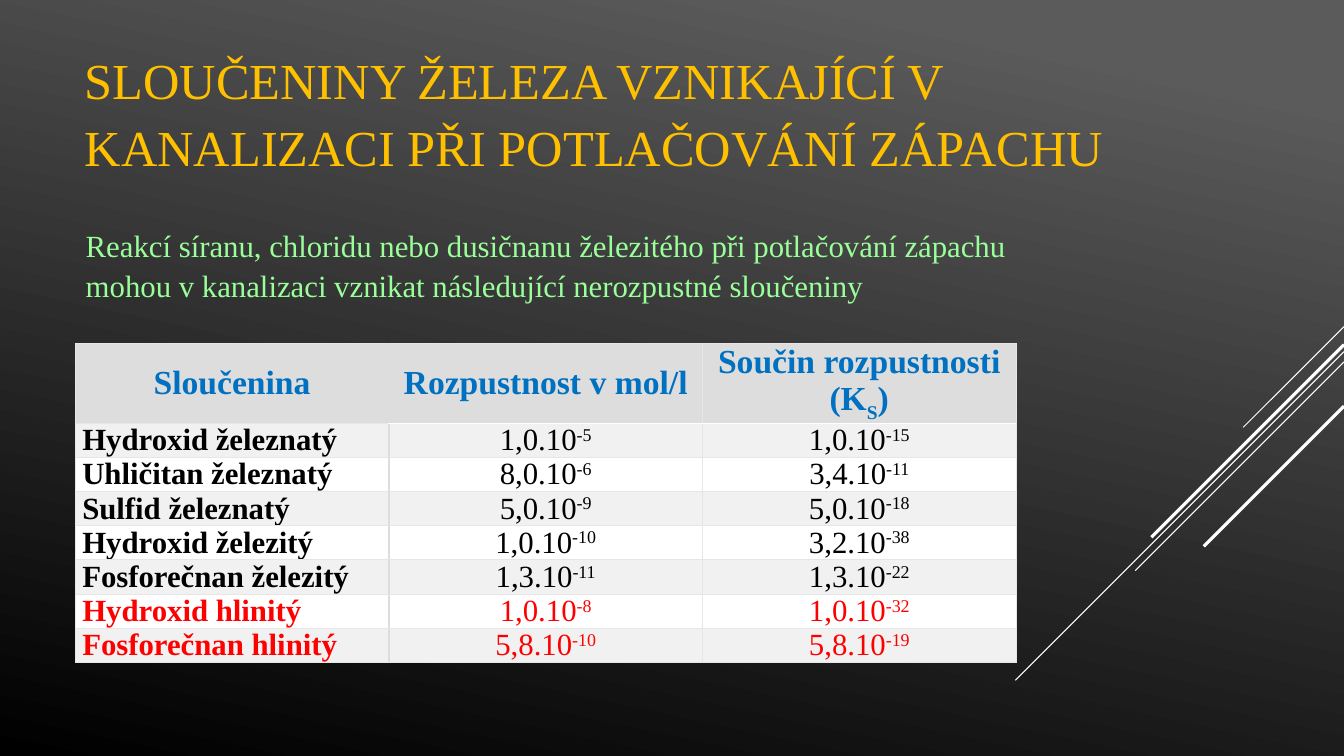
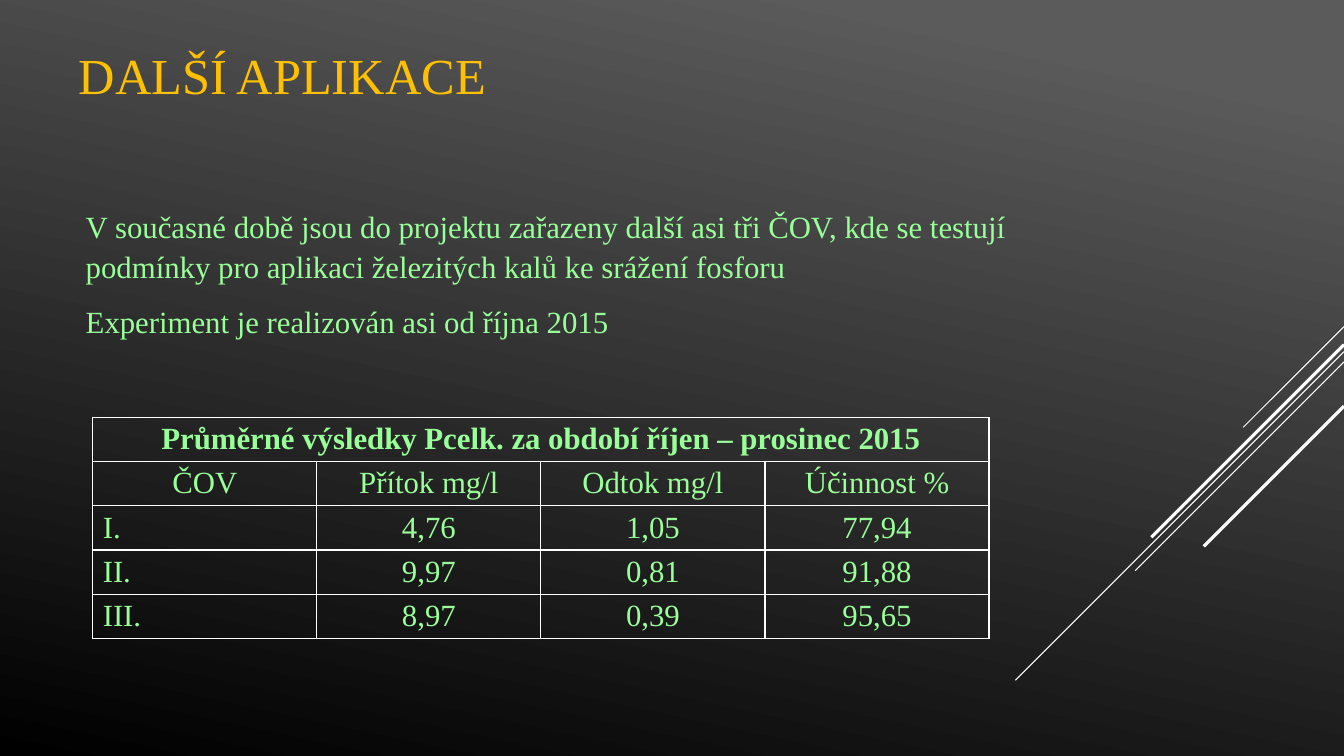
from lxml.etree import SubElement
from pptx import Presentation
from pptx.dml.color import RGBColor
from pptx.enum.shapes import MSO_CONNECTOR
from pptx.enum.text import MSO_ANCHOR, MSO_AUTO_SIZE, PP_ALIGN
from pptx.oxml import parse_xml
from pptx.oxml.ns import nsdecls, qn
from pptx.util import Inches, Pt

FONT = "Times New Roman"
WHITE, BLACK, RED = "FFFFFF", "000000", "FF0000"
GOLD, GREEN, BLUE = "FFC000", "99FF99", "0070C0"
HEADER, BAND, HAIRLINE = "DDDDDD", "F1F1F1", "E6E6E6"
LEFT, CENTER = PP_ALIGN.LEFT, PP_ALIGN.CENTER


def paint(target, hex_color):
    if hasattr(target, "solid"):
        target.solid()
        target = target.fore_color
    target.rgb = RGBColor.from_string(hex_color)


def write(para, text, size=22, color=GREEN, bold=False, align=LEFT,
          spacing=1.0, after=0, shift=30):
    para.alignment = align
    para.line_spacing = spacing
    para.space_before = Pt(0)
    para.space_after = Pt(after)
    for index, piece in enumerate(text.split("|")):
        span = para.add_run()
        span.text = piece
        span.font.name = FONT
        span.font.size = Pt(size)
        span.font.bold = bold
        paint(span.font.color, color)
        if index % 2:
            span.font._element.set("baseline", str(shift * 1000))


deck = Presentation()
deck.slide_width, deck.slide_height = Inches(13.33), Inches(7.5)
column, row = deck.slide_width / 100, deck.slide_height / 100
master = deck.slide_master
layout = deck.slide_layouts.get_by_name("Title and Content")

backdrop = master.background.fill
backdrop.gradient()
backdrop.gradient_angle = 258
for stop, position, shade in zip(backdrop.gradient_stops, (0.1, 1), ("5B5B5B", BLACK)):
    stop.position = position
    paint(stop.color, shade)

pages = [
    {
        "title": "SLOUČENINY ŽELEZA VZNIKAJÍCÍ V KANALIZACI PŘI POTLAČOVÁNÍ ZÁPACHU",
        "title_at": (5.55, 5.07, 78.53, 12.13),
        "body": ["Reakcí síranu, chloridu nebo dusičnanu železitého při potlačování zápachu "
                 "mohou v kanalizaci vznikat následující nerozpustné sloučeniny"],
        "body_at": (5.63, 28.8, 70, 62.13),
        "table_at": (5.6, 45.47, 70),
        "row_heights": [10.53] + [4.51] * 7,
        "light": True,
        "rows": [
            ["Sloučenina", "Rozpustnost v mol/l", "Součin rozpustnosti (K|S|)"],
            ["Hydroxid železnatý", "1,0.10|-5", "1,0.10|-15"],
            ["Uhličitan železnatý", "8,0.10|-6", "3,4.10|-11"],
            ["Sulfid železnatý", "5,0.10|-9", "5,0.10|-18"],
            ["Hydroxid železitý", "1,0.10|-10", "3,2.10|-38"],
            ["Fosforečnan železitý", "1,3.10|-11", "1,3.10|-22"],
            ["Hydroxid hlinitý", "1,0.10|-8", "1,0.10|-32"],
            ["Fosforečnan hlinitý", "5,8.10|-10", "5,8.10|-19"],
        ],
    },
    {
        "title": "DALŠÍ APLIKACE",
        "title_at": (5.1, 4.4, 70, 17.6),
        "body": ["V současné době jsou do projektu zařazeny další asi tři ČOV, kde se testují "
                 "podmínky pro aplikaci železitých kalů ke srážení fosforu",
                 "Experiment je realizován asi od října 2015"],
        "body_at": (5.63, 26.27, 70, 61.07),
        "table_at": (6.9, 55.2, 66.7),
        "row_heights": [5.85] * 5,
        "light": False,
        "rows": [
            ["Průměrné výsledky Pcelk. za období říjen – prosinec 2015", "", "", ""],
            ["ČOV", "Přítok mg/l", "Odtok mg/l", "Účinnost %"],
            ["I.", "4,76", "1,05", "77,94"],
            ["II.", "9,97", "0,81", "91,88"],
            ["III.", "8,97", "0,39", "95,65"],
        ],
    },
]

for content in pages:
    page = deck.slides.add_slide(layout)
    title, body = page.placeholders
    for box, key in ((title, "title_at"), (body, "body_at")):
        left, top, width, height = content[key]
        box.left, box.top = int(left * column), int(top * row)
        box.width, box.height = int(width * column), int(height * row)
        box.text_frame.auto_size = MSO_AUTO_SIZE.NONE
        box.text_frame.vertical_anchor = MSO_ANCHOR.TOP
    write(title.text_frame.paragraphs[0], content["title"], size=36, color=GOLD, spacing=1.1)
    for index, text in enumerate(content["body"]):
        frame = body.text_frame
        para = frame.add_paragraph() if index else frame.paragraphs[0]
        write(para, text, spacing=1.1, after=10)
        properties = para._p.get_or_add_pPr()
        properties.set("marL", "0")
        properties.set("indent", "0")
        SubElement(properties, qn("a:buNone"))

    rows, light = content["rows"], content["light"]
    left, top, width = content["table_at"]
    table = page.shapes.add_table(
        len(rows), len(rows[0]), int(left * column), int(top * row),
        int(width * column), int(sum(content["row_heights"]) * row)).table
    table.first_row = table.horz_banding = False
    for line, height in zip(table.rows, content["row_heights"]):
        line.height = int(height * row)
    if not light:
        table.cell(0, 0).merge(table.cell(0, len(rows[0]) - 1))

    for r, texts in enumerate(rows):
        for c, text in enumerate(texts):
            cell = table.cell(r, c)
            edge = (HAIRLINE, 0.75) if light else (WHITE, 1)
            borders = dict.fromkeys("LRTB", edge)
            style = {"align": CENTER}
            if light:
                cell.margin_left = cell.margin_right = Inches(0.07)
                cell.margin_top = cell.margin_bottom = 0
                cell.vertical_anchor = MSO_ANCHOR.MIDDLE
                paint(cell.fill, HEADER if r == 0 else BAND if r % 2 else WHITE)
                if c < 2:
                    borders["R"] = (HEADER, 1.25 if c == 0 else 0.75)
                if c == 1:
                    borders["L"] = (HEADER, 1.25)
                if r < 2 and c:
                    borders["B" if r == 0 else "T"] = (WHITE, 1.25)
                if r == 0:
                    style.update(size=24, color=BLUE, bold=True, shift=-25)
                else:
                    style.update(color=RED if r > 5 else BLACK, bold=c == 0)
                    style["align"] = CENTER if c else LEFT
            else:
                cell.fill.background()
                style.update(bold=r == 0, align=LEFT if r > 1 and c == 0 else CENTER)
            if text:
                write(cell.text_frame.paragraphs[0], text, **style)
            for index, (side, (shade, weight)) in enumerate(borders.items()):
                cell._tc.get_or_add_tcPr().insert(index, parse_xml(
                    f'<a:ln{side} {nsdecls("a")} w="{Pt(weight)}"><a:solidFill>'
                    f'<a:srgbClr val="{shade}"/></a:solidFill></a:ln{side}>'))

diagonals = [(43.2, 7.5, 0.75), (46.53, 24.45, 0.75), (47.87, 15.53, 0.75),
             (45.6, 14.33, 2.25), (53.73, 10.43, 2.25)]
for index, (start, run, weight) in enumerate(diagonals):
    top, reach = int(start * row), int(run * column)
    diagonal = page.shapes.add_connector(
        MSO_CONNECTOR.STRAIGHT, deck.slide_width, top, deck.slide_width - reach, top + reach)
    paint(diagonal.line.fill, WHITE)
    diagonal.line.width = Pt(weight)
    SubElement(diagonal.element.spPr, qn("a:effectLst"))
    diagonal.element.nvCxnSpPr.cNvPr.id = 20 + index
    master.shapes.element.append(diagonal.element)

deck.save("out.pptx")
